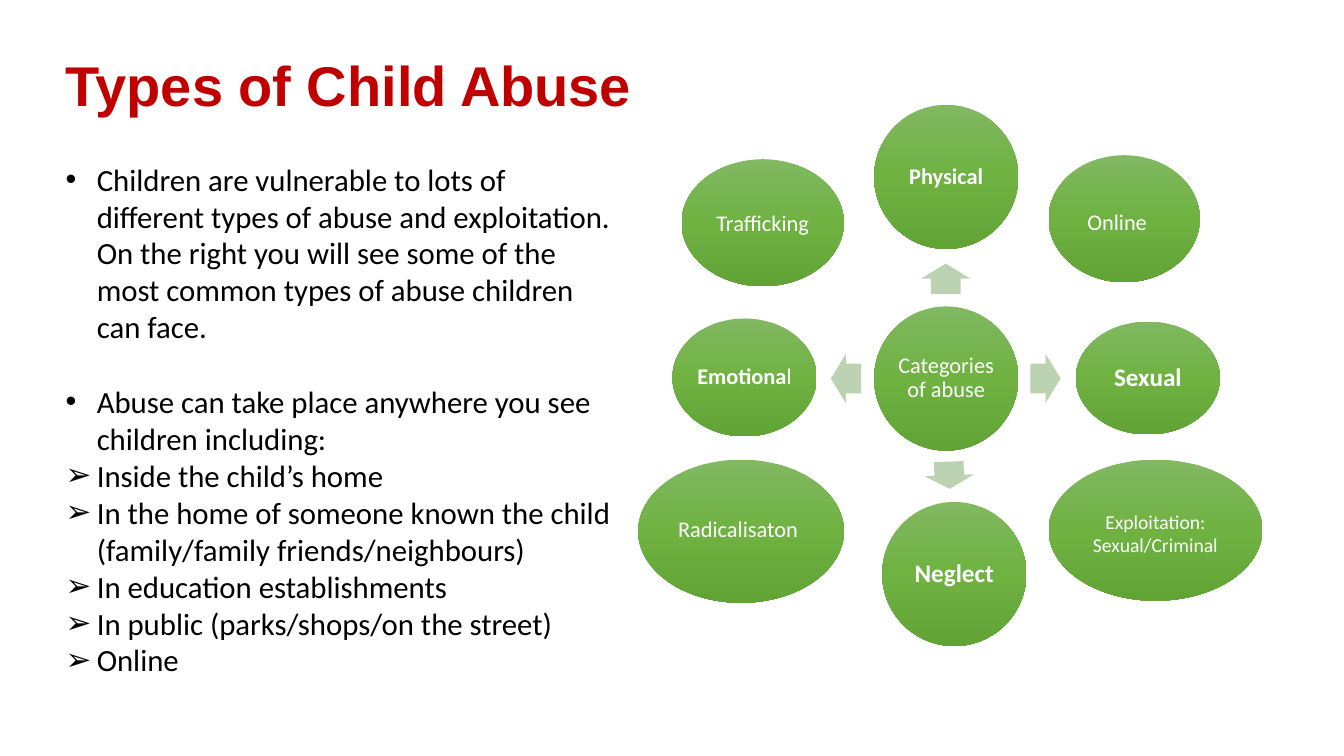
from dataclasses import dataclass

from lxml.etree import SubElement
from pptx import Presentation
from pptx.dml.color import RGBColor
from pptx.enum.shapes import MSO_SHAPE as Shape
from pptx.enum.text import MSO_ANCHOR as Anchor, MSO_AUTO_SIZE as AutoSize, PP_ALIGN as Align
from pptx.oxml.ns import qn
from pptx.util import Pt

PX = 9144
GREENS = ((0, "81B861"), (50, "6FB242"), (100, "62A336"))
ARROW_GREEN = "BBD3B1"
BULLETS = (
    ("•", "Children are vulnerable to lots of different types of abuse and exploitation. "
          "On the right you will see some of the most common types of abuse children can face."),
    ("•", "Abuse can take place anywhere you see children including:"),
    ("➢", "Inside the child’s home"),
    ("➢", "In the home of someone known the child (family/family friends/neighbours)"),
    ("➢", "In education establishments"),
    ("➢", "In public (parks/shops/on the street)"),
    ("➢", "Online"),
)


@dataclass
class Bubble:
    frame: tuple
    bold: str = ""
    plain: str = ""
    size: int = 16
    spacing: float = 0.9
    shift: tuple = (0, 0)


BUBBLES = (
    Bubble((867, 304, 143, 143), plain="Categories of abuse"),
    Bubble((867, 104, 143, 143), bold="Physical"),
    Bubble((1067, 319, 143, 112), bold="Sexual", size=18),
    Bubble((875, 498, 143, 143), bold="Neglect", size=18),
    Bubble((667, 316, 143, 117), bold="Emotiona", plain="l"),
    Bubble((1040, 154, 150, 126), plain="Online", spacing=1, shift=(-7, 3)),
    Bubble((633, 456, 204, 142), plain="Radicalisaton", spacing=1, shift=(-3, -3)),
    Bubble((676, 158, 161, 126), plain="Trafficking", spacing=1),
    Bubble((1040, 456, 212, 140), plain="Exploitation:\nSexual/Criminal", size=14,
           spacing=1, shift=(0, 3)),
)
ARROWS = (
    ((923, 252, 30, 49), 270),
    ((1022, 351, 30, 49), 0),
    ((928, 447, 27, 49), 87.7),
    ((824, 351, 30, 49), 180),
)


def color(value):
    return RGBColor.from_string(value)


def scaled(frame):
    return [length * PX for length in frame]


def place(shape, frame):
    shape.left, shape.top, shape.width, shape.height = scaled(frame)


def set_font(para, name, size, value):
    para.font.name = name
    para.font.size = Pt(size)
    para.font.color.rgb = color(value)


def fill_gradient(shape):
    shape.fill.gradient()
    shape.fill.gradient_angle = 270
    stops = shape.element.spPr.find(qn("a:gradFill")).find(qn("a:gsLst"))
    for stop in list(stops):
        stops.remove(stop)
    for percent, value in GREENS:
        stop = SubElement(stops, qn("a:gs"), pos=str(percent * 1000))
        SubElement(stop, qn("a:srgbClr"), val=value)


def add_plain_shape(page, kind, frame):
    shape = page.shapes.add_shape(kind, *scaled(frame))
    shape.shadow.inherit = False
    shape.line.fill.background()
    return shape


def add_bubble(page, bubble):
    shape = add_plain_shape(page, Shape.OVAL, bubble.frame)
    fill_gradient(shape)
    box = shape.text_frame
    box.word_wrap = True
    box.vertical_anchor = Anchor.MIDDLE
    across, down = bubble.shift
    box.margin_left = (2 + 2 * max(across, 0)) * PX
    box.margin_right = (2 + 2 * max(-across, 0)) * PX
    box.margin_top = (2 + 2 * max(down, 0)) * PX
    box.margin_bottom = (2 + 2 * max(-down, 0)) * PX
    for index, line in enumerate((bubble.bold or bubble.plain).split("\n")):
        para = box.add_paragraph() if index else box.paragraphs[0]
        para.alignment = Align.CENTER
        para.line_spacing = bubble.spacing
        set_font(para, "Calibri", bubble.size, "FFFFFF")
        span = para.add_run()
        span.text = line
        if bubble.bold:
            span.font.bold = True
    if bubble.bold and bubble.plain:
        span = para.add_run()
        span.text = bubble.plain


def add_arrow(page, frame, angle):
    arrow = add_plain_shape(page, Shape.RIGHT_ARROW, frame)
    arrow.adjustments[0] = 0.6
    arrow.adjustments[1] = 0.5
    arrow.rotation = angle
    arrow.fill.solid()
    arrow.fill.fore_color.rgb = color(ARROW_GREEN)


def write_title(title):
    place(title, (55, 46, 933, 145))
    box = title.text_frame
    box.auto_size = AutoSize.NONE
    box.vertical_anchor = Anchor.TOP
    box.margin_top = 12 * PX
    box.text = "Types of Child Abuse"
    para = box.paragraphs[0]
    para.alignment = Align.LEFT
    para.line_spacing = 0.9
    set_font(para, "Arial", 40, "C00000")
    para.font.bold = True


def write_bullets(body):
    place(body, (55, 154, 562, 589))
    box = body.text_frame
    box.auto_size = AutoSize.NONE
    box.vertical_anchor = Anchor.TOP
    for index, (mark, text) in enumerate(BULLETS):
        para = box.add_paragraph() if index else box.paragraphs[0]
        para.text = text
        para.space_before = Pt(26.8 if index == 1 else 0)
        props = para._p.get_or_add_pPr()
        props.set("marL", str(31 * PX))
        props.set("indent", str(-31 * PX))
        SubElement(props, qn("a:buFont"), typeface="Arial")
        SubElement(props, qn("a:buChar"), char=mark)
        set_font(para, "Calibri", 22, "000000")


def main():
    deck = Presentation()
    deck.slide_width, deck.slide_height = scaled((1333, 750))
    page = deck.slides.add_slide(deck.slide_layouts[1])
    write_title(page.shapes.title)
    write_bullets(page.placeholders[1])
    for bubble in BUBBLES:
        add_bubble(page, bubble)
    for frame, angle in ARROWS:
        add_arrow(page, frame, angle)
    deck.save("out.pptx")


if __name__ == "__main__":
    main()
